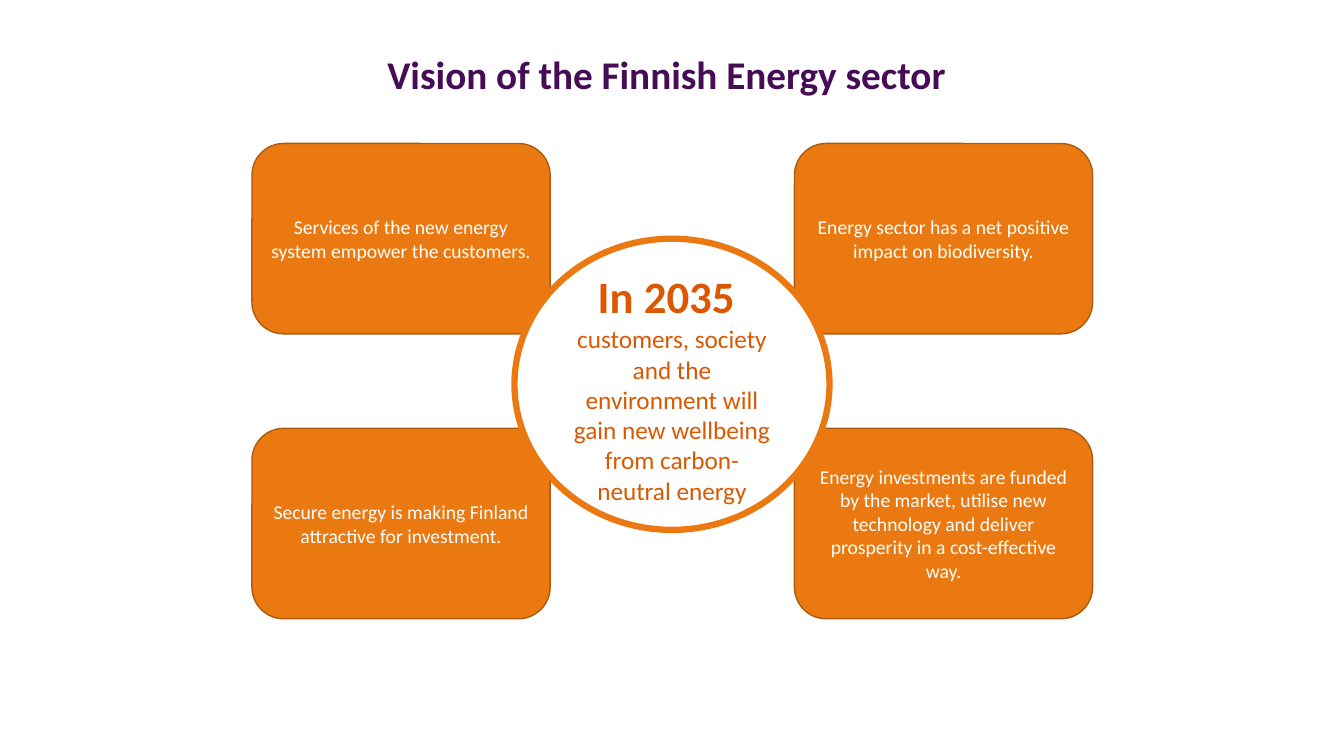
from pptx import Presentation
from pptx.dml.color import RGBColor
from pptx.enum.shapes import MSO_SHAPE
from pptx.enum.text import MSO_ANCHOR, MSO_AUTO_SIZE, PP_ALIGN
from pptx.util import Pt

COLORS = {
    "title": "460D56",
    "orange": "EA7911",
    "outline": "AD5A0D",
    "vision": "DB5800",
    "white": "FFFFFF",
}
FONT = "Calibri"

# Rows of goals, left then right
GOALS = [
    ["Services of the new energy system empower the customers.",
     "Energy sector has a net positive impact on biodiversity."],
    ["Secure energy is making Finland attractive for investment.",
     "Energy investments are funded by the market, utilise new technology "
     "and deliver prosperity in a cost-effective way."],
]


def color(name):
    return RGBColor.from_string(COLORS[name])


def add_text(para, text, size, ink, bold=False):
    para.alignment = PP_ALIGN.CENTER
    span = para.add_run()
    span.text = text
    span.font.name = FONT
    span.font.size = Pt(size)
    span.font.bold = bold
    span.font.color.rgb = color(ink)


def add_panel(page, kind, left, top, width, height, fill, line, weight):
    panel = page.shapes.add_shape(kind, Pt(left), Pt(top), Pt(width), Pt(height))
    panel.shadow.inherit = False
    panel.fill.solid()
    panel.fill.fore_color.rgb = color(fill)
    panel.line.color.rgb = color(line)
    panel.line.width = Pt(weight)
    frame = panel.text_frame
    frame.word_wrap = True
    frame.vertical_anchor = MSO_ANCHOR.MIDDLE
    return frame


def place_title(page, left, top, width, height):
    title = page.shapes.title
    title.left, title.top = Pt(left), Pt(top)
    title.width, title.height = Pt(width), Pt(height)
    frame = title.text_frame
    frame.auto_size = MSO_AUTO_SIZE.NONE
    frame.word_wrap = True
    frame.vertical_anchor = MSO_ANCHOR.MIDDLE
    frame.margin_bottom = Pt(34)
    para = frame.paragraphs[0]
    para.line_spacing = 0.9
    add_text(para, "Vision of the Finnish Energy sector", 28, "title", bold=True)


def place_goals(page, left, top, width, height):
    """Put one goal card in each corner of the given box."""
    card_width, card_height = 213, 136
    for row, goals in enumerate(GOALS):
        for column, goal in enumerate(goals):
            frame = add_panel(
                page, MSO_SHAPE.ROUNDED_RECTANGLE,
                left + column * (width - card_width),
                top + row * (height - card_height),
                card_width, card_height, "orange", "outline", 1)
            add_text(frame.paragraphs[0], goal, 14, "white")


def place_vision(page, left, top, width, height):
    frame = add_panel(page, MSO_SHAPE.OVAL, left, top, width, height,
                      "white", "orange", 4.5)
    heading = frame.paragraphs[0]
    add_text(heading, "In 2035", 32, "vision", bold=True)
    add_text(heading, " ", 36, "vision")
    add_text(frame.add_paragraph(),
             "customers, society and the environment will gain new wellbeing "
             "from carbon-neutral energy", 18, "vision")


def main():
    deck = Presentation()
    deck.slide_width, deck.slide_height = Pt(960), Pt(540)
    page = deck.slides.add_slide(deck.slide_layouts[5])
    place_title(page, 48, 29, 856, 82)
    place_goals(page, 180, 102.5, 600.5, 339.5)
    place_vision(page, 367.5, 170.5, 225, 208)
    deck.save("out.pptx")


if __name__ == "__main__":
    main()
